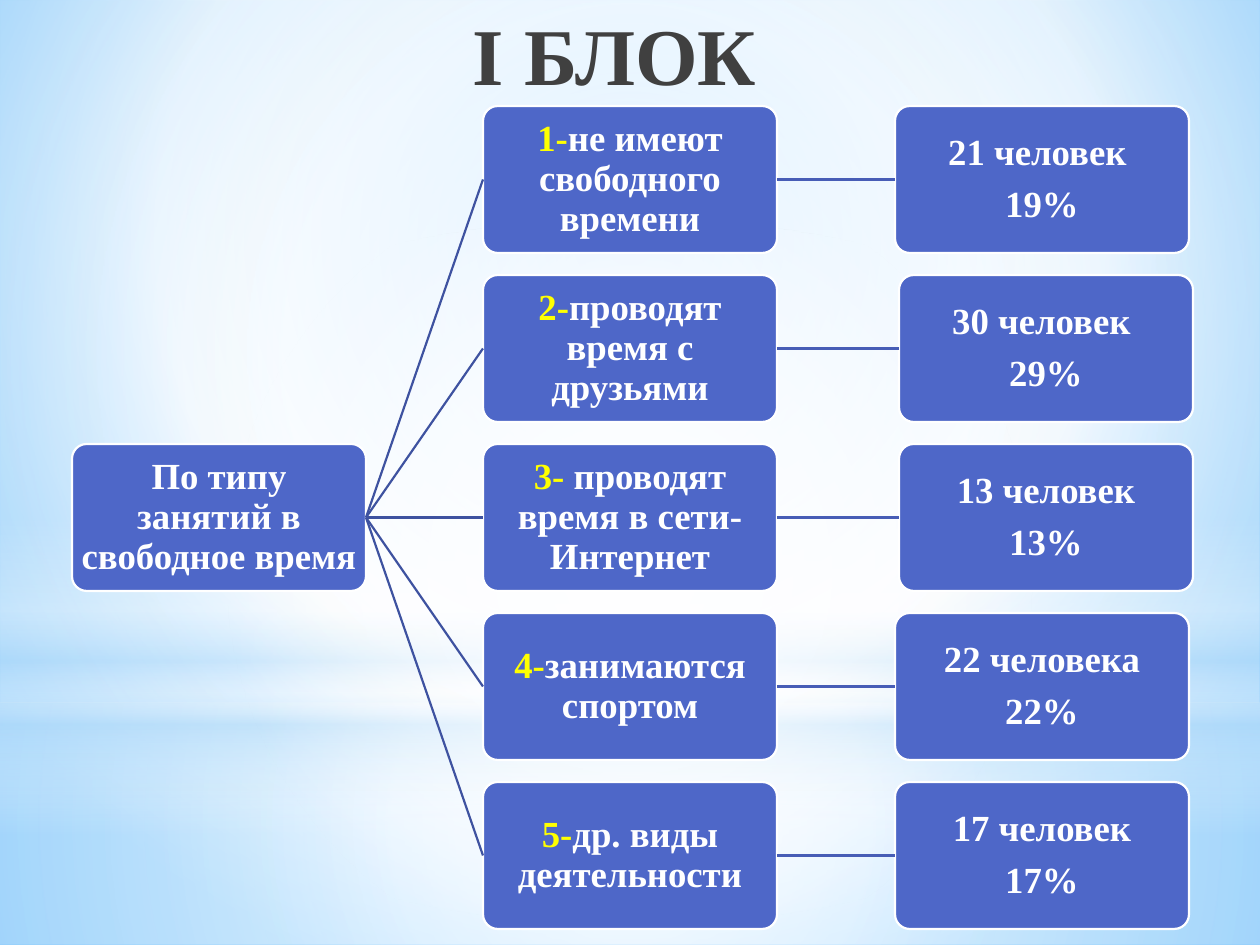
from lxml import etree
from pptx import Presentation
from pptx.dml.color import RGBColor
from pptx.enum.shapes import MSO_CONNECTOR, MSO_SHAPE
from pptx.enum.text import MSO_ANCHOR, PP_ALIGN
from pptx.oxml.ns import qn
from pptx.util import Emu, Pt

RECT, OVAL, ROUNDED = MSO_SHAPE.RECTANGLE, MSO_SHAPE.OVAL, MSO_SHAPE.ROUNDED_RECTANGLE
STRAIGHT = MSO_CONNECTOR.STRAIGHT
CENTER, RIGHT, MIDDLE = PP_ALIGN.CENTER, PP_ALIGN.RIGHT, MSO_ANCHOR.MIDDLE
LEFT_SIDE, RIGHT_SIDE = 1, 3

# Content
TITLE = "I БЛОК"
ROOT = "По типу занятий в свободное время"
# number, activity, people, share, px that the result box is moved right
ROWS = [
    ("1-", "не имеют свободного времени", "21 человек ", "19%", 0),
    ("2-", "проводят время с друзьями", "30 человек ", "29%", 4),
    ("3- ", "проводят время в сети-Интернет", "13 человек", "13%", 4),
    ("4-", "занимаются спортом", "22 человека", "22%", 0),
    ("5-", "др. виды деятельности", "17 человек", "17%", 0),
]

# Look
FONT = "Times New Roman"
COLORS = {
    "title": "404040", "box": "4E67C8", "text": "FFFFFF", "number": "FFFF00",
    "edge": "FFFFFF", "branch": "3E52A0", "result": "475DB6",
    "white": "FFFFFF", "haze": "B4DCFA", "sky": "9ED5FF", "deep": "5BB9FF",
}
# Gradient stops: position %, colour, opacity %
BACKGROUND = [(0, "sky", 100), (60, "white", 100), (100, "deep", 100)]
CENTRE = (50, 50, 50, 50)
# Backdrop: preset, top, height, stops, focus of a circular gradient (None: downward)
BACKDROP = [
    (RECT, 703, 242, [(0, "white", 91), (37, "white", 76), (100, "haze", 79)], CENTRE),
    (RECT, 0, 703, [(0, "white", 89), (48, "white", 62), (100, "haze", 79)], CENTRE),
    (RECT, 519, 315, [(0, "white", 0), (29, "white", 30), (45, "haze", 40),
                      (55, "white", 26), (65, "haze", 60), (100, "white", 0)], None),
    (OVAL, 220, 703, [(0, "white", 100), (56, "white", 0)], CENTRE),
]

# Grid, in px
SLIDE_W, SLIDE_H = 1260, 945
BOX_W, BOX_H, INSET = 294, 147, 5
ROOT_X, ACTIVITY_X, RESULT_X = 72, 483, 895
FIRST_Y, PITCH, ROOT_ROW = 106, 169, 2


def px(n):
    return Emu(n * 914400 // 126)


def rgb(name):
    return RGBColor.from_string(COLORS[name])


def set_gradient(parent, stops, focus):
    """Swap the solid fill under parent for a gradient."""
    gradient = etree.Element(qn("a:gradFill"), rotWithShape="1")
    stop_list = etree.SubElement(gradient, qn("a:gsLst"))
    for position, color, opacity in stops:
        stop = etree.SubElement(stop_list, qn("a:gs"), pos=str(position * 1000))
        tint = etree.SubElement(stop, qn("a:srgbClr"), val=COLORS[color])
        if opacity < 100:
            etree.SubElement(tint, qn("a:alpha"), val=str(opacity * 1000))
    if focus:
        circle = etree.SubElement(gradient, qn("a:path"))
        circle.set("path", "circle")
        sides = {side: str(v * 1000) for side, v in zip("ltrb", focus)}
        etree.SubElement(circle, qn("a:fillToRect"), **sides)
    else:
        etree.SubElement(gradient, qn("a:lin"), ang="5400000", scaled="0")
    solid = parent.find(qn("a:solidFill"))
    parent.replace(solid, gradient)


def style_run(run, size, color):
    run.font.name, run.font.size, run.font.bold = FONT, Pt(size), True
    run.font.color.rgb = rgb(color)


def add_box(shapes, x, row, paragraphs):
    """Add a rounded box; each paragraph is a list of (text, colour) runs."""
    box = shapes.add_shape(ROUNDED, px(x), px(FIRST_Y + row * PITCH), px(BOX_W), px(BOX_H))
    box.adjustments[0] = 0.1
    box.shadow.inherit = False
    box.fill.solid()
    box.fill.fore_color.rgb = rgb("box")
    box.line.color.rgb = rgb("edge")
    box.line.width = Pt(1.25)
    frame = box.text_frame
    frame.word_wrap, frame.vertical_anchor = True, MIDDLE
    frame.margin_left = frame.margin_right = px(INSET)
    frame.margin_top = frame.margin_bottom = px(INSET)
    for i, runs in enumerate(paragraphs):
        paragraph = frame.add_paragraph() if i else frame.paragraphs[0]
        paragraph.alignment = CENTER
        paragraph.line_spacing = 0.9
        paragraph.space_after = Pt(7.35)
        for text, color in runs:
            run = paragraph.add_run()
            run.text = text
            style_run(run, 21, color)
    return box


def join(shapes, start, end, color):
    link = shapes.add_connector(STRAIGHT, 0, 0, 0, 0)
    link.begin_connect(start, RIGHT_SIDE)
    link.end_connect(end, LEFT_SIDE)
    link.line.color.rgb = rgb(color)
    link.line.width = Pt(1.25)
    etree.SubElement(link._element.spPr, qn("a:effectLst"))


def main():
    prs = Presentation()
    prs.slide_width, prs.slide_height = px(SLIDE_W), px(SLIDE_H)
    slide = prs.slides.add_slide(prs.slide_layouts[5])
    shapes = slide.shapes

    # Background and backdrop
    slide.background.fill.solid()
    set_gradient(slide._element.cSld.bg.bgPr, BACKGROUND, (20, 10, 20, 60))
    for preset, top, height, stops, focus in BACKDROP:
        glow = shapes.add_shape(preset, 0, px(top), px(SLIDE_W), px(height))
        glow.shadow.inherit = False
        glow.line.fill.background()
        glow.fill.solid()
        set_gradient(glow._element.spPr, stops, focus)

    # Title, brought in front of the backdrop
    title = shapes.title
    title._element.getparent().append(title._element)
    title.left, title.top, title.width, title.height = px(412), px(0), px(357), px(106)
    title.text_frame.text = TITLE
    title.text_frame.vertical_anchor = MIDDLE
    heading = title.text_frame.paragraphs[0]
    heading.alignment = RIGHT
    style_run(heading.runs[0], 46, "title")

    # Tree: root, activities, results
    root = add_box(shapes, ROOT_X, ROOT_ROW, [[(ROOT, "text")]])
    for row, (number, activity, people, share, shift) in enumerate(ROWS):
        kind = add_box(shapes, ACTIVITY_X, row, [[(number, "number"), (activity, "text")]])
        result = add_box(shapes, RESULT_X + shift, row, [[(people, "text")], [(share, "text")]])
        join(shapes, root, kind, "branch")
        join(shapes, kind, result, "result")

    prs.save("out.pptx")


if __name__ == "__main__":
    main()
